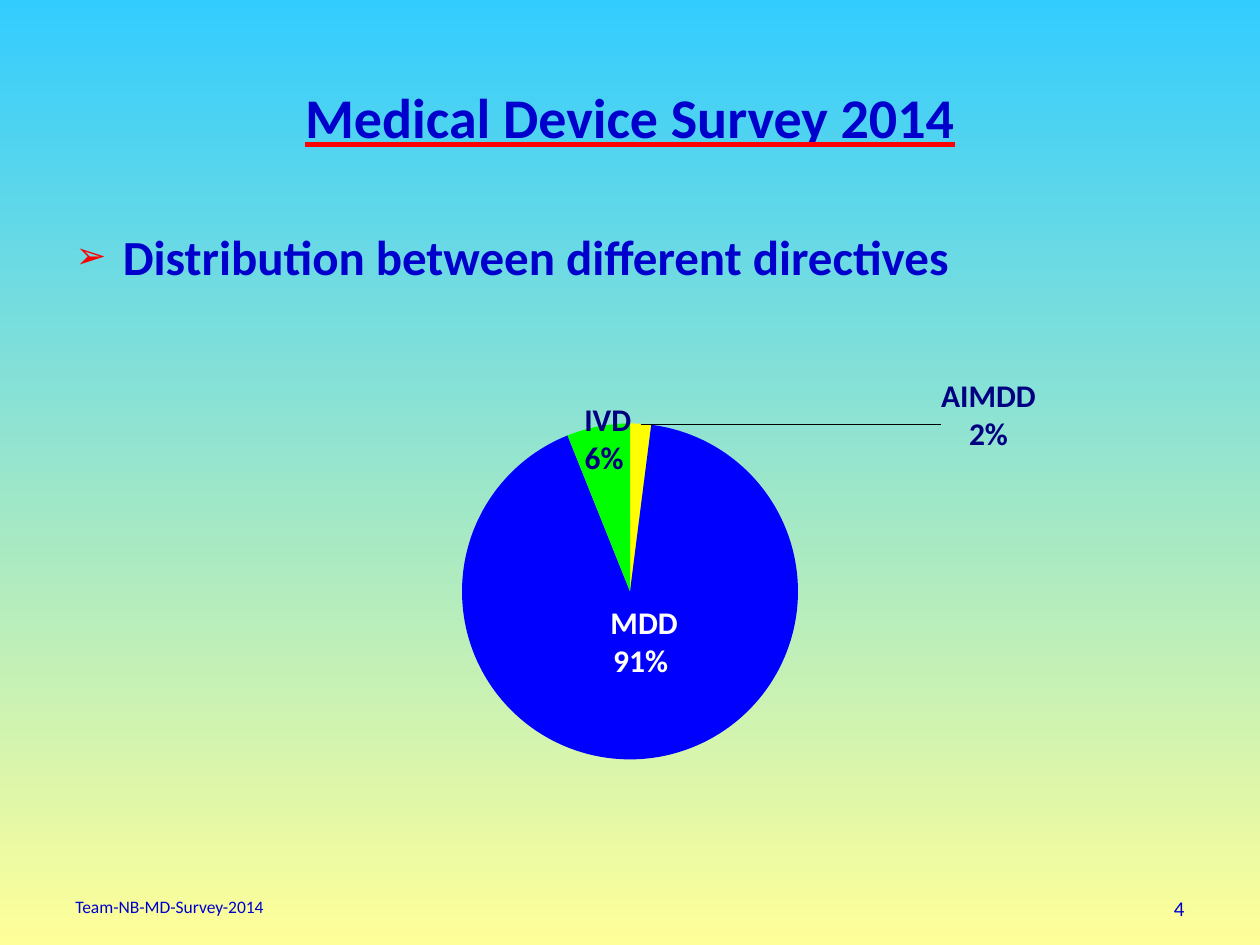
from lxml import etree
from pptx import Presentation
from pptx.chart.data import CategoryChartData
from pptx.dml.color import RGBColor
from pptx.enum import chart as charts, text
from pptx.oxml import ns, parse_xml
from pptx.util import Pt

COLORS = {
    "sky": "33CCFF", "sand": "FFFF99", "text": "0000CC", "accent": "FF0000",
    "label": "000080", "white": "FFFFFF", "black": "000000",
    "aimdd": "FFFF00", "mdd": "0000FF", "ivd": "00FF00",
}
FONT = "Calibri"

# category, value, slice colour, label colour, label position, label offset, fixed label
DIRECTIVES = [
    ("AIMDD", 2, "aimdd", "label", "outEnd", (0.35, 0.07), None),
    (" MDD", 91, "mdd", "white", "ctr", (0, -0.06), (" MDD", "91%")),
    (" IVD", 6, "ivd", "label", "ctr", (-0.01, -0.13), None),
]


def rgb(name):
    return RGBColor.from_string(COLORS[name])


def place(shape, box):
    shape.left, shape.top, shape.width, shape.height = (Pt(v) for v in box)


def write(frame, wording, size, align, bold=False):
    frame.text = wording
    frame.word_wrap = True
    frame.auto_size = text.MSO_AUTO_SIZE.NONE
    paragraph = frame.paragraphs[0]
    paragraph.alignment = align
    font = paragraph.runs[0].font
    font.name, font.size, font.bold = FONT, Pt(size), bold
    font.color.rgb = rgb("text")
    return paragraph


def paint_background(slide):
    fill = slide.background.fill
    fill.gradient()
    fill.gradient_angle = 270
    for stop, name in zip(fill.gradient_stops, ("sky", "sand")):
        stop.color.rgb = rgb(name)


def add_title(slide, box):
    title = slide.shapes.title
    place(title, box)
    frame = title.text_frame
    frame.vertical_anchor = text.MSO_ANCHOR.MIDDLE
    run = write(frame, "Medical Device Survey 2014", 32, text.PP_ALIGN.CENTER, True).runs[0]
    run.font.underline = True
    underline = parse_xml(
        f'<a:uFill {ns.nsdecls("a")}><a:solidFill><a:srgbClr val="{COLORS["accent"]}"/>'
        "</a:solidFill></a:uFill>")
    run.font._element.find(ns.qn("a:latin")).addprevious(underline)


def add_bullet(slide, box):
    body = slide.placeholders[1]
    place(body, box)
    paragraph = write(body.text_frame, "Distribution between\u00a0different directives",
                      28, text.PP_ALIGN.LEFT, True)
    paragraph.space_before = Pt(0)
    properties = paragraph._p.get_or_add_pPr()
    properties.set("marL", str(Pt(27)))
    properties.set("indent", str(-Pt(27)))
    color = etree.SubElement(properties, ns.qn("a:buClr"))
    etree.SubElement(color, ns.qn("a:srgbClr"), val=COLORS["accent"])
    etree.SubElement(properties, ns.qn("a:buSzPct"), val="75000")
    etree.SubElement(properties, ns.qn("a:buFont"), typeface="Arial")
    etree.SubElement(properties, ns.qn("a:buChar"), char="➢")


def add_footer(slide, box):
    left, top, width, height = box
    number_width = 168
    parts = [
        ("Team-NB-MD-Survey-2014", left, 228, 10, text.PP_ALIGN.LEFT),
        ("4", left + width - number_width, number_width, 12, text.PP_ALIGN.RIGHT),
    ]
    for wording, x, part_width, size, align in parts:
        part = slide.shapes.add_textbox(Pt(x), Pt(top), Pt(part_width), Pt(height))
        write(part.text_frame, wording, size, align)


def run_style(tag, color):
    return (f'<a:{tag} sz="1800" b="1"><a:solidFill><a:srgbClr val="{COLORS[color]}"/>'
            f'</a:solidFill><a:latin typeface="{FONT}"/></a:{tag}>')


def text_style(color):
    return (f'<c:txPr><a:bodyPr/><a:p><a:pPr>{run_style("defRPr", color)}</a:pPr>'
            "</a:p></c:txPr>")


def slice_labels():
    """Return the c:dLbls element with category, share and offset of every slice."""
    number = '<c:numFmt formatCode="0%" sourceLinked="0"/>'
    shown = ('<c:showLegendKey val="0"/><c:showVal val="0"/><c:showCatName val="1"/>'
             '<c:showSerName val="0"/><c:showPercent val="1"/><c:showBubbleSize val="0"/>'
             "<c:separator>\n</c:separator>")
    labels = ""
    for index, (_, _, _, color, position, (dx, dy), lines) in enumerate(DIRECTIVES):
        fixed = ""
        if lines:
            paragraphs = "".join(
                f'<a:p><a:r>{run_style("rPr", color)}<a:t>{line}</a:t></a:r></a:p>'
                for line in lines)
            fixed = f"<c:tx><c:rich><a:bodyPr/>{paragraphs}</c:rich></c:tx>"
        labels += (
            f'<c:dLbl><c:idx val="{index}"/><c:layout><c:manualLayout><c:x val="{dx}"/>'
            f'<c:y val="{dy}"/></c:manualLayout></c:layout>{fixed}{number}'
            f'{text_style(color)}<c:dLblPos val="{position}"/>{shown}</c:dLbl>')
    leader = ('<c:showLeaderLines val="1"/><c:leaderLines><c:spPr><a:ln w="3175"><a:solidFill>'
              f'<a:srgbClr val="{COLORS["black"]}"/></a:solidFill></a:ln></c:spPr></c:leaderLines>')
    return parse_xml(f'<c:dLbls {ns.nsdecls("c", "a")}>{labels}{number}'
                     f'{text_style("label")}{shown}{leader}</c:dLbls>')


def add_pie(slide, box):
    data = CategoryChartData()
    data.categories = [row[0] for row in DIRECTIVES]
    data.add_series("Series 1", [row[1] for row in DIRECTIVES])
    pie = slide.shapes.add_chart(charts.XL_CHART_TYPE.PIE, *(Pt(v) for v in box), data).chart
    pie.has_legend = pie.has_title = False
    pie.font.name, pie.font.size = "Arial", Pt(10)
    pie.font.color.rgb = rgb("black")
    plot = pie.plots[0]
    plot.vary_by_categories = True
    series = plot.series[0]
    for index, row in enumerate(DIRECTIVES):
        fill = series.points[index].format.fill
        fill.solid()
        fill.fore_color.rgb = rgb(row[2])
    series._element.find(ns.qn("c:cat")).addprevious(slice_labels())

    diameter = 192
    width, height = diameter / box[2], diameter / box[3]
    area = pie._chartSpace.chart.plotArea
    for old in area.findall(ns.qn("c:layout")):
        area.remove(old)
    sizes = {"x": (1 - width) / 2, "y": (1 - height) / 2, "w": width, "h": height}
    lengths = "".join(f'<c:{key} val="{value:.4f}"/>' for key, value in sizes.items())
    area.insert(0, parse_xml(
        f'<c:layout {ns.nsdecls("c")}><c:manualLayout><c:layoutTarget val="inner"/>'
        f'<c:xMode val="edge"/><c:yMode val="edge"/>{lengths}</c:manualLayout></c:layout>'))


def main():
    deck = Presentation()
    deck.slide_width, deck.slide_height = Pt(720), Pt(540)
    slide = deck.slides.add_slide(deck.slide_layouts[1])
    paint_background(slide)
    add_title(slide, (36, 21.6, 648, 90))
    add_bullet(slide, (36, 126, 648, 59))
    add_pie(slide, (76.5, 185, 567, 306))
    add_footer(slide, (36, 508.3, 648, 21))
    deck.save("out.pptx")


if __name__ == "__main__":
    main()
